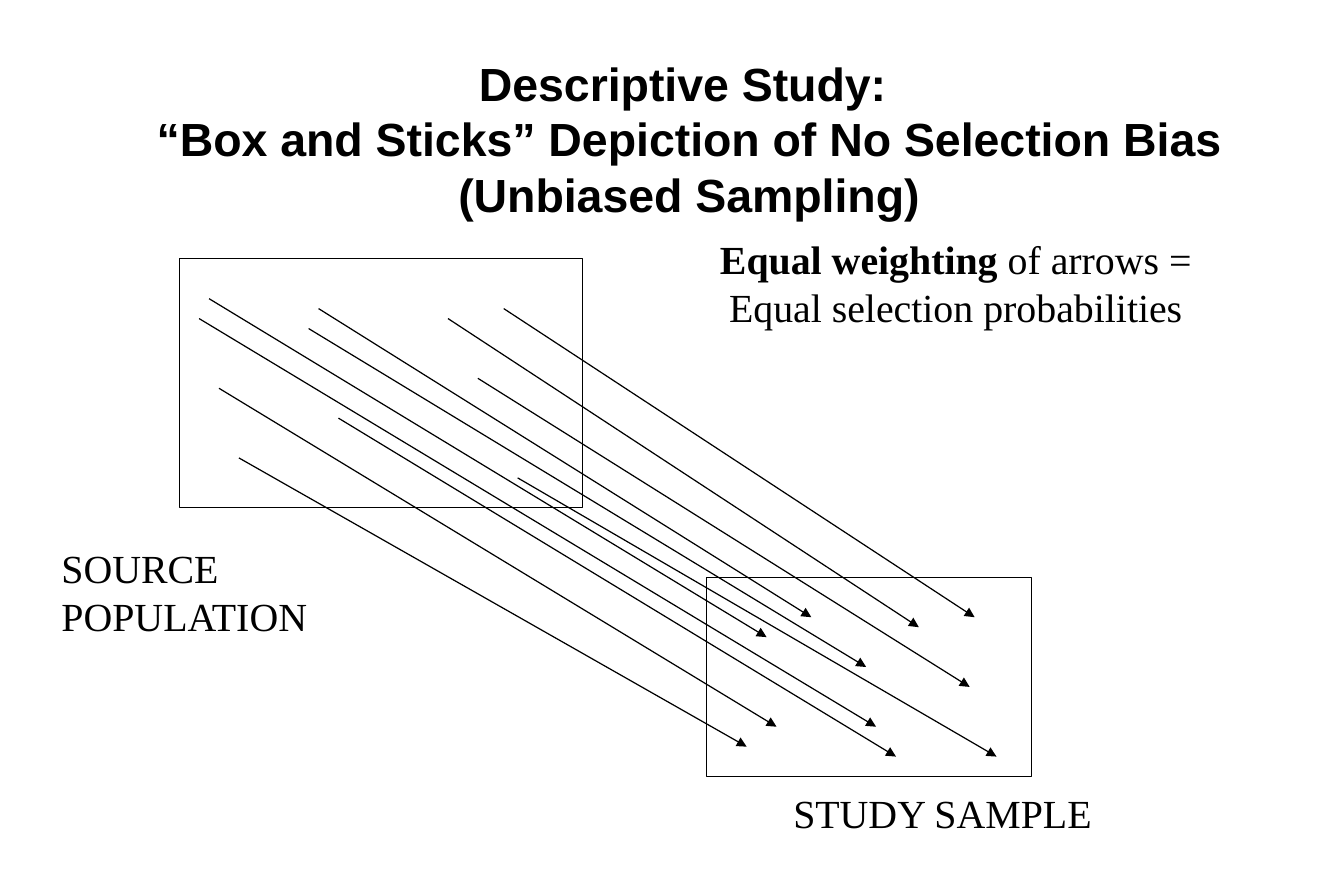
import dataclasses

import lxml.etree
import pptx
import pptx.dml.color
import pptx.enum.shapes
import pptx.enum.text
import pptx.oxml.ns
import pptx.util

ALIGN = pptx.enum.text.PP_ALIGN


@dataclasses.dataclass(frozen=True)
class Theme:
    ink: str = "000000"
    paper: str = "FFFFFF"
    heading_font: str = "Arial"
    body_font: str = "Times New Roman"
    heading_size: int = 28
    body_size: int = 24
    stroke: float = 0.75


class DiagramSlide:
    COLUMNS = 135
    ROWS = 90

    def __init__(self, deck, theme):
        self.theme = theme
        self.column = deck.slide_width / self.COLUMNS
        self.row = deck.slide_height / self.ROWS
        self.slide = deck.slides.add_slide(deck.slide_layouts[6])
        background = self.slide.background.fill
        background.solid()
        background.fore_color.rgb = self.color(theme.paper)

    def color(self, value):
        return pptx.dml.color.RGBColor.from_string(value)

    def place(self, *cells):
        units = (self.column, self.row) * 2
        return [round(cell * unit) for cell, unit in zip(cells, units)]

    def outline(self, line):
        line.color.rgb = self.color(self.theme.ink)
        line.width = pptx.util.Pt(self.theme.stroke)

    def box(self, *cells):
        rectangle = self.slide.shapes.add_shape(
            pptx.enum.shapes.MSO_SHAPE.RECTANGLE, *self.place(*cells))
        rectangle.shadow.inherit = False
        rectangle.fill.background()
        self.outline(rectangle.line)

    def arrow(self, *ends):
        stick = self.slide.shapes.add_connector(
            pptx.enum.shapes.MSO_CONNECTOR.STRAIGHT, *self.place(*ends))
        self.outline(stick.line)
        qn = pptx.oxml.ns.qn
        properties = stick._element.spPr
        head = lxml.etree.SubElement(properties.find(qn("a:ln")), qn("a:tailEnd"))
        head.set("type", "triangle")
        lxml.etree.SubElement(properties, qn("a:effectLst"))

    def text(self, cells, paragraphs, align=ALIGN.LEFT, heading=False, wrap=True):
        theme = self.theme
        frame = self.slide.shapes.add_textbox(*self.place(*cells)).text_frame
        frame.word_wrap = wrap
        frame.auto_size = pptx.enum.text.MSO_AUTO_SIZE.SHAPE_TO_FIT_TEXT
        for index, runs in enumerate(paragraphs):
            paragraph = frame.add_paragraph() if index else frame.paragraphs[0]
            paragraph.alignment = align
            for words, bold in runs:
                run = paragraph.add_run()
                run.text = words
                run.font.bold = bold
                run.font.name = theme.heading_font if heading else theme.body_font
                run.font.size = pptx.util.Pt(
                    theme.heading_size if heading else theme.body_size)
                run.font.color.rgb = self.color(theme.ink)


SELECTIONS = [
    (32, 31, 81.5, 62),
    (24, 46, 75, 75),
    (50.6, 31, 97.9, 62),
    (52, 48, 100.1, 76),
    (20, 32, 88, 73),
    (45, 32, 92.3, 63),
    (48, 38, 97.4, 69),
    (22, 39, 78, 73),
    (31, 33, 87, 67),
    (34, 42, 90, 76),
    (21, 30, 77, 64),
]


def main():
    deck = pptx.Presentation()
    deck.slide_width = pptx.util.Inches(11.25)
    deck.slide_height = pptx.util.Inches(7.5)
    study = DiagramSlide(deck, Theme())

    study.box(18, 26, 40.5, 25)
    study.box(71, 58, 32.6, 20)
    for selection in SELECTIONS:
        study.arrow(*selection)

    study.text((5, 54, 30, 10.8), [[("SOURCE POPULATION", False)]])
    study.text((78.5, 78.6, 32.5, 6), [[("STUDY SAMPLE", False)]], wrap=False)
    study.text(
        (8.8, 4.9, 120.8, 18.1),
        [[("Descriptive Study: ", True)],
         [("“Box and Sticks” Depiction of No Selection Bias "
           "(Unbiased Sampling)", True)]],
        ALIGN.CENTER, heading=True)
    study.text(
        (70.5, 23, 51, 10.9),
        [[("Equal weighting ", True),
          ("of arrows = Equal selection probabilities", False)]],
        ALIGN.CENTER)

    deck.save("out.pptx")


if __name__ == "__main__":
    main()
